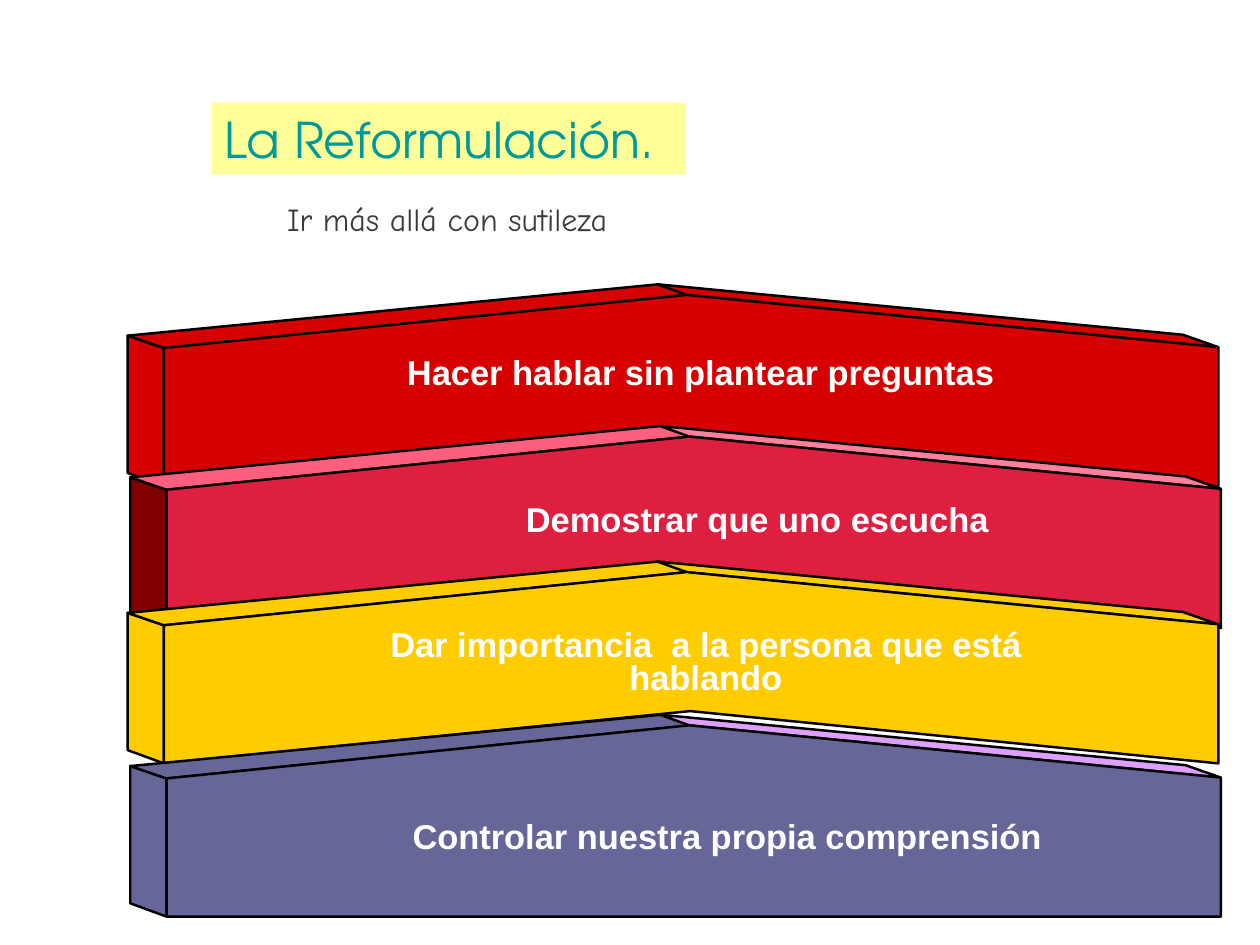
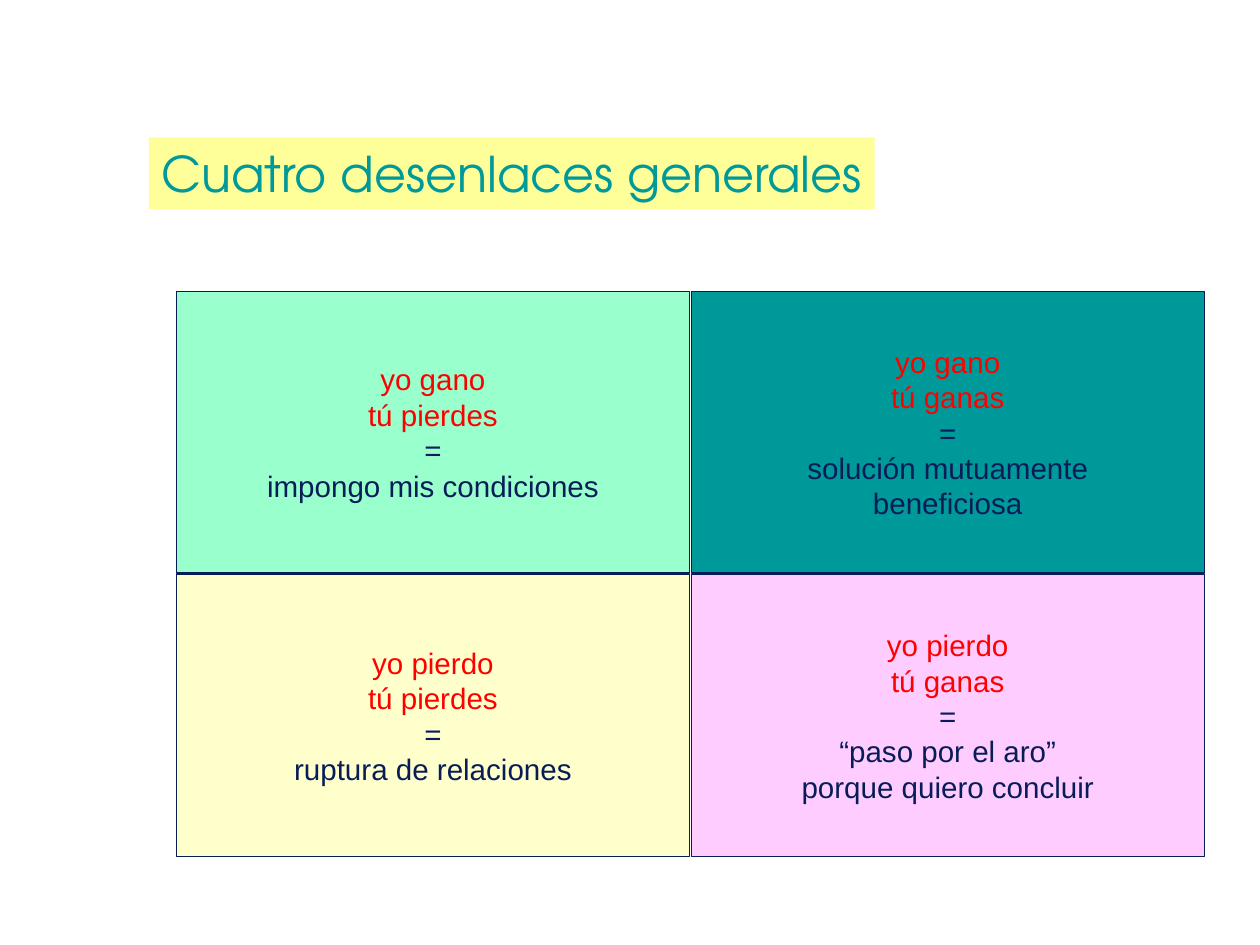
from pptx import Presentation
from pptx.dml.color import RGBColor
from pptx.enum.shapes import MSO_SHAPE as SHAPE
from pptx.enum.text import MSO_ANCHOR as ANCHOR, PP_ALIGN as ALIGN
from pptx.util import Pt

PX = 9144  # EMU per px, 100 px to the inch
WIDTH, HEIGHT = 1422, 1067

BLACK = RGBColor(0x00, 0x00, 0x00)
WHITE = RGBColor(0xFF, 0xFF, 0xFF)
GREY = RGBColor(0x3B, 0x3B, 0x3B)
TEAL = RGBColor(0x00, 0x99, 0x99)
PALE_YELLOW = RGBColor(0xFF, 0xFF, 0x99)
NAVY = RGBColor(0x08, 0x1D, 0x58)
BRIGHT_RED = RGBColor(0xFF, 0x00, 0x00)
RED = RGBColor(0xD6, 0x00, 0x00)
MAROON = RGBColor(0x80, 0x00, 0x00)
ROSE = RGBColor(0xFF, 0x5F, 0x7F)
PINK = RGBColor(0xFF, 0x7F, 0x9F)
CRIMSON = RGBColor(0xDF, 0x1F, 0x3F)
GOLD = RGBColor(0xFF, 0xCC, 0x00)
SLATE = RGBColor(0x66, 0x66, 0x99)
LILAC = RGBColor(0xDF, 0x9F, 0xFF)
MINT = RGBColor(0x99, 0xFF, 0xCC)
CREAM = RGBColor(0xFF, 0xFF, 0xCC)
PALE_PINK = RGBColor(0xFF, 0xCC, 0xFF)

TITLE_FONT, BODY_FONT, NOTE_FONT = "TeX Gyre Adventor", "Arial", "Comic Neue"

# Faces of a bar, measured from its left edge and the height of its ridge
SIDE = [(41, 72), (41, 228), (0, 213), (0, 58)]
TOP_LEFT = [(0, 58), (41, 72), (632, 12), (599, 0)]
TOP_RIGHT = [(598, 0), (631, 12), (1231, 71), (1191, 57)]
NOTCH = (635, 169)
FRONT = [(41, 72), (41, 228), NOTCH, (1231, 228), (1231, 71), (631, 12)]
FLAT_FRONT = [point for point in FRONT if point != NOTCH]


class Deck:
    """Holds the presentation, its style and the current slide."""

    def __init__(self):
        self.prs = Presentation()
        self.prs.slide_width, self.prs.slide_height = WIDTH * PX, HEIGHT * PX

    def new_slide(self):
        self.shapes = self.prs.slides.add_slide(self.prs.slide_layouts[6]).shapes

    def paint(self, sp, fill, line=None, weight=1):
        sp.shadow.inherit = False
        sp.fill.solid()
        sp.fill.fore_color.rgb = fill
        if line is None:
            sp.line.fill.background()
        else:
            sp.line.color.rgb = line
            sp.line.width = Pt(weight)

    def rect(self, x, y, w, h, fill, line=None):
        sp = self.shapes.add_shape(SHAPE.RECTANGLE, x * PX, y * PX, w * PX, h * PX)
        self.paint(sp, fill, line)
        return sp

    def set_text(self, sp, lines, size, font, insets, align=ALIGN.LEFT,
                 anchor=ANCHOR.TOP, bold=False, spacing=None):
        """Fill a shape with (text, colour) lines."""
        tf = sp.text_frame
        tf.word_wrap = True
        tf.vertical_anchor = anchor
        tf.margin_left, tf.margin_top, tf.margin_right, tf.margin_bottom = (
            inset * PX for inset in insets)
        for i, (text, color) in enumerate(lines):
            p = tf.add_paragraph() if i else tf.paragraphs[0]
            p.alignment = align
            p.line_spacing = spacing
            r = p.add_run()
            r.text = text
            r.font.name, r.font.size, r.font.bold = font, Pt(size), bold
            r.font.color.rgb = color

    def text(self, x, y, w, h, lines, size, font, insets, **style):
        sp = self.shapes.add_textbox(x * PX, y * PX, w * PX, h * PX)
        self.set_text(sp, lines, size, font, insets, **style)

    def title(self, x, y, w, text):
        self.set_text(self.rect(x, y, w, 81, PALE_YELLOW), [(text, TEAL)],
                      40, TITLE_FONT, (14, 7, 0, 7))

    def face(self, x, y, points, fill):
        (x0, y0), *rest = [(x + dx, y + dy) for dx, dy in points]
        outline = self.shapes.build_freeform(x0, y0, scale=PX)
        outline.add_line_segments(rest, close=True)
        self.paint(outline.convert_to_shape(), fill, BLACK, 2)

    def bar(self, x, y, fills, front, label, box):
        """Draw a folded bar: side, two top faces, front and its label."""
        for points, fill in zip((SIDE, TOP_LEFT, TOP_RIGHT, front), fills):
            self.face(x, y, points, fill)
        self.text(*box, [(label, WHITE)], 28, BODY_FONT, (12, 6, 12, 6),
                  align=ALIGN.CENTER, bold=True, spacing=0.8)

    def cell(self, x, y, w, h, fill, outcome, meaning):
        lines = [(text, BRIGHT_RED) for text in outcome]
        lines += [(text, NAVY) for text in ("=", *meaning)]
        self.set_text(self.rect(x, y, w, h, fill, NAVY), lines, 24, BODY_FONT,
                      (15, 7, 15, 7), align=ALIGN.CENTER, anchor=ANCHOR.MIDDLE,
                      spacing=Pt(28.8))


def reformulation_slide(deck):
    deck.new_slide()
    deck.title(239, 116, 535, "La Reformulación.")
    bars = [
        (144, 321, [RED] * 4, FRONT,
         "Hacer hablar sin plantear preguntas", (260, 399, 1061, 49)),
        (147, 481, [MAROON, ROSE, PINK, CRIMSON], FRONT,
         "Demostrar que uno escucha", (324, 565, 1061, 49)),
        (144, 634, [GOLD] * 4, FRONT,
         "Dar importancia  a la persona que está hablando", (409, 707, 775, 87)),
        (147, 807, [SLATE, SLATE, LILAC, SLATE], FLAT_FRONT,
         "Controlar nuestra propia comprensión", (290, 923, 1061, 49)),
    ]
    for bar in bars:
        deck.bar(*bar)
    deck.text(310, 218, 417, 58, [("Ir más allá con sutileza", GREY)],
              26, NOTE_FONT, (14, 7, 0, 7))


def outcomes_slide(deck):
    deck.new_slide()
    deck.title(168, 155, 819, "Cuatro desenlaces generales")
    left, top, w, h, gap = 199, 329, 579, 318, 2
    cells = [
        (MINT, ("yo gano", "tú pierdes"), ["impongo mis condiciones"]),
        (TEAL, ("yo gano", "tú ganas"), ["solución mutuamente", "beneficiosa"]),
        (CREAM, ("yo pierdo", "tú pierdes"), ["ruptura de relaciones"]),
        (PALE_PINK, ("yo pierdo", "tú ganas"),
         ["“paso por el aro”", "porque quiero concluir"]),
    ]
    for i, cell in enumerate(cells):
        row, col = divmod(i, 2)
        deck.cell(left + col * (w + gap), top + row * (h + gap), w, h, *cell)


def main():
    deck = Deck()
    reformulation_slide(deck)
    outcomes_slide(deck)
    deck.prs.save("out.pptx")


if __name__ == "__main__":
    main()
